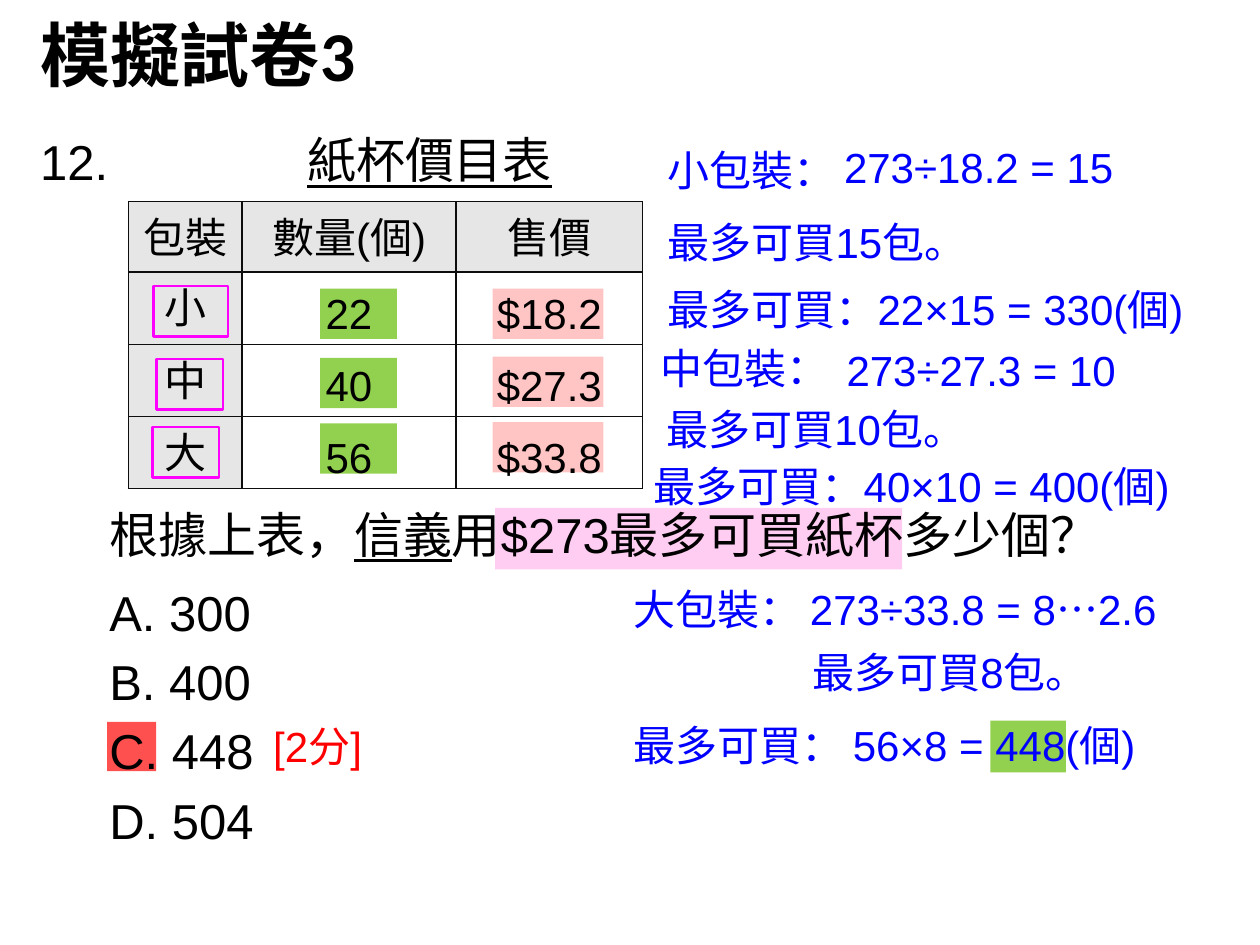
from lxml import etree
from pptx import Presentation
from pptx.dml.color import RGBColor
from pptx.enum.shapes import MSO_SHAPE as Shape
from pptx.enum.text import MSO_ANCHOR as Anchor, MSO_AUTO_SIZE as AutoSize, PP_ALIGN as Align
from pptx.oxml.ns import qn
from pptx.util import Inches, Pt

BLACK = RGBColor(0, 0, 0)
BLUE = RGBColor(0, 0, 0xFF)
RED = RGBColor(0xFF, 0, 0)
MAGENTA = RGBColor(0xFF, 0, 0xFF)
GREEN = RGBColor(0x92, 0xD0, 0x50)
ROSE = RGBColor(0xFF, 0xC5, 0xC5)
PINK = RGBColor(0xFF, 0xCD, 0xF2)
CORAL = RGBColor(0xFF, 0x50, 0x50)
GREY = RGBColor(0xE6, 0xE6, 0xE6)
BORDER = "0D0D0D"
LATIN, CHINESE, SYMBOL = "Arial", "Noto Sans CJK TC", "Noto Sans CJK SC"


def write(paragraph, parts, size=24, color=BLACK, bold=False, line=None, after=None,
          align=None, hanging=None):
    """Write a string, or (text, format) parts, into one paragraph."""
    if hanging:
        paragraph_format = paragraph._p.get_or_add_pPr()
        paragraph_format.set("marL", str(Inches(hanging)))
        paragraph_format.set("indent", str(-Inches(hanging)))
    if line:
        paragraph.line_spacing = Pt(line)
    if after:
        paragraph.space_after = Pt(after)
    paragraph.alignment = align
    for words, style in [(parts, {})] if isinstance(parts, str) else parts:
        run = paragraph.add_run()
        run.text = words
        font = run.font
        font.name, font.size, font.bold = style.get("font", LATIN), Pt(size), bold
        font.underline = style.get("underline", False)
        font.color.rgb = color
        east_asian = etree.Element(qn("a:ea"), typeface=style.get("east_asian", CHINESE))
        run._r.rPr.find(qn("a:latin")).addnext(east_asian)


def add_text(slide, box, *paragraphs, wrap=True, anchor=Anchor.MIDDLE, **style):
    frame = slide.shapes.add_textbox(*map(Inches, box)).text_frame
    frame.word_wrap = wrap
    frame.auto_size = AutoSize.SHAPE_TO_FIT_TEXT if wrap else AutoSize.NONE
    frame.vertical_anchor = anchor
    for index, parts in enumerate(paragraphs):
        write(frame.add_paragraph() if index else frame.paragraphs[0], parts, **style)


def add_mark(slide, box, fill=None, outline=None):
    mark = slide.shapes.add_shape(Shape.RECTANGLE, *map(Inches, box))
    mark.shadow.inherit = False
    if fill:
        mark.fill.solid()
        mark.fill.fore_color.rgb = fill
    else:
        mark.fill.background()
    if outline:
        mark.line.color.rgb = outline
        mark.line.width = Pt(1.5)
    else:
        mark.line.fill.background()


def add_borders(cell):
    properties = cell._tc.get_or_add_tcPr()
    for side in ("lnL", "lnR", "lnT", "lnB"):
        edge = etree.SubElement(properties, qn("a:" + side), w=str(Pt(1)))
        fill = etree.SubElement(edge, qn("a:solidFill"))
        etree.SubElement(fill, qn("a:srgbClr"), val=BORDER)


def price_table(slide, left, top, width, height):
    # Highlights behind the quantities and prices
    for price_y, quantity_y in ((0.69, 0.69), (1.23, 1.24), (1.75, 1.76)):
        add_mark(slide, (left + 2.89, top + price_y, 0.88, 0.4), fill=ROSE)
        add_mark(slide, (left + 1.52, top + quantity_y, 0.61, 0.4), fill=GREEN)

    rows = (("包裝", "數量(個)", "售價"), ("小", "22", "$18.2"),
            ("中", "40", "$27.3"), ("大", "56", "$33.8"))
    table = slide.shapes.add_table(4, 3, *map(Inches, (left, top, width, height))).table
    table.first_row = table.horz_banding = False
    for column, column_width in zip(table.columns, (0.9, 1.7, 1.48)):
        column.width = Inches(column_width)
    for row, row_height in zip(table.rows, (0.56, 0.57, 0.57, 0.57)):
        row.height = Inches(row_height)
    for r, values in enumerate(rows):
        for c, value in enumerate(values):
            cell = table.cell(r, c)
            is_heading = r == 0 or c == 0
            add_borders(cell)
            if is_heading:
                cell.fill.solid()
                cell.fill.fore_color.rgb = GREY
            else:
                cell.fill.background()
            write(cell.text_frame.paragraphs[0], value, align=Align.CENTER,
                  line=33 if is_heading else 34)

    # Frames around the pack sizes
    for x, y, frame_width in ((0.2, 0.67, 0.59), (0.22, 1.25, 0.53), (0.19, 1.79, 0.53)):
        add_mark(slide, (left + x, top + y, frame_width, 0.4), outline=MAGENTA)


def heading(slide, left, top):
    add_text(slide, (left, top, 3.15, 0.82),
             [("模擬試卷", {"font": CHINESE}), ("3", {"font": "Calibri"})],
             size=40, bold=True, anchor=Anchor.TOP)
    add_text(slide, (left, top + 0.95, 1.12, 0.57), "12.", size=28, hanging=0.44)
    add_text(slide, (left + 2.12, top + 0.94, 2.27, 0.57),
             [("紙杯價目表", {"underline": True})], size=28)


def question(slide, left, top):
    add_mark(slide, (left + 3.16, top + 0.08, 3.23, 0.49), fill=PINK)
    add_text(slide, (left, top, 8.58, 0.57),
             [("根據上表，", {}), ("信義", {"underline": True}),
              ("用$273最多可買紙杯多少個？", {})], size=28, hanging=0.44)


def choices(slide, left, top):
    add_mark(slide, (left + 0.08, top + 1.17, 0.39, 0.39), fill=CORAL)
    add_text(slide, (left + 1.3, top + 1.11, 1.02, 0.5), "[2分]", color=RED,
             anchor=Anchor.TOP)
    add_text(slide, (left, top, 2.93, 2.24), "A. 300", "B. 400", "C. 448", "D. 504",
             size=28, after=6)


def working(slide, left, top, pack, division, packs, total):
    """Place one pack's four lines; each is (text, x, y, width, height)."""
    for index, (words, x, y, width, height) in enumerate((pack, division, packs, total)):
        is_formula = index in (1, 3)
        spacing = {"line": 24} if is_formula else {"after": 3}
        add_text(slide, (left + x, top + y, width, height), words, color=BLUE,
                 wrap=not is_formula, **spacing)


def main():
    deck = Presentation()
    deck.slide_width, deck.slide_height = Inches(10), Inches(7.5)
    slide = deck.slides.add_slide(deck.slide_layouts[6])

    heading(slide, 0.22, 0.04)
    price_table(slide, 1.02, 1.6, 4.08, 2.27)
    question(slide, 0.77, 3.95)

    # Small, medium and large packs
    working(slide, 5.2, 1.1,
            ("小包裝：", 0, 0, 1.75, 0.5),
            ("273÷18.2 = 15", 1.4, 0.01, 2.62, 0.5),
            ("最多可買15包。", 0, 0.57, 2.9, 0.5),
            ("最多可買：22×15 = 330(個)", 0, 1.13, 4.71, 0.5))
    working(slide, 5.09, 2.67,
            ("中包裝：", 0.05, 0, 1.75, 0.5),
            ("273÷27.3 = 10", 1.53, 0.07, 3.05, 0.45),
            ("最多可買10包。", 0.1, 0.48, 3.17, 0.5),
            ("最多可買：40×10 = 400(個)", 0, 0.97, 4.4, 0.5))
    add_mark(slide, (7.86, 5.72, 0.6, 0.41), fill=GREEN)
    working(slide, 4.93, 4.58,
            ("大包裝：", 0, 0, 1.75, 0.5),
            ([("273÷33.8 = 8", {}), ("…", {"font": SYMBOL, "east_asian": SYMBOL}),
              ("2.6", {})], 1.4, 0.06, 3.05, 0.45),
            ("最多可買8包。", 1.42, 0.5, 3.17, 0.5),
            ("最多可買： 56×8 = 448(個)", 0, 1.11, 4.64, 0.5))

    choices(slide, 0.77, 4.56)
    deck.save("out.pptx")


if __name__ == "__main__":
    main()
